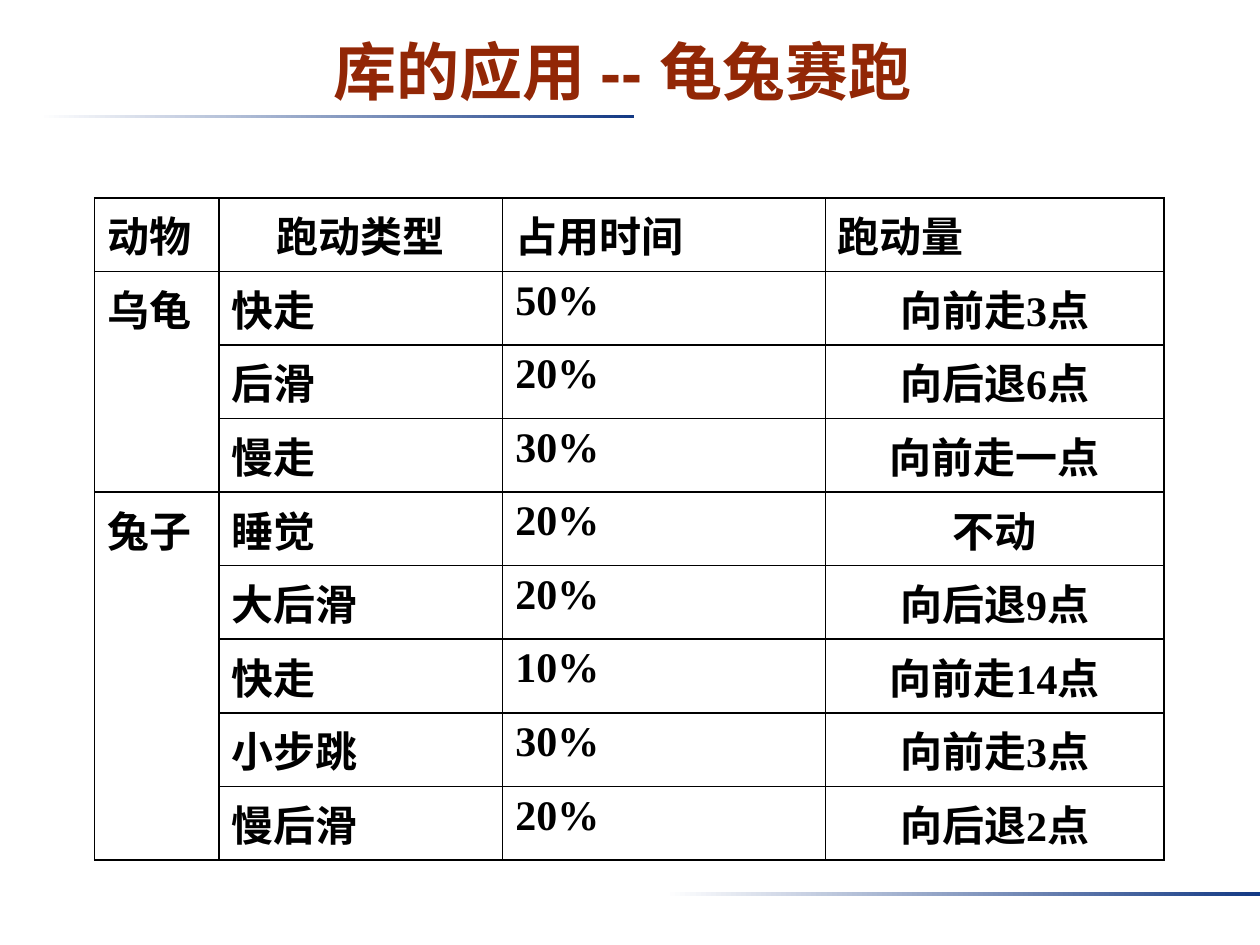
from lxml.etree import SubElement
from pptx import Presentation
from pptx.dml.color import RGBColor
from pptx.enum.shapes import MSO_SHAPE as SHAPE
from pptx.enum.text import MSO_ANCHOR as ANCHOR, PP_ALIGN as ALIGN
from pptx.oxml import parse_xml
from pptx.oxml.ns import nsdecls, qn
from pptx.util import Inches, Pt

HEADER = ["动物", "跑动类型", "占用时间", "跑动量"]
ANIMALS = {
    "乌龟": [
        ("快走", "50%", "向前走3点"),
        ("后滑", "20%", "向后退6点"),
        ("慢走", "30%", "向前走一点"),
    ],
    "兔子": [
        ("睡觉", "20%", "不动"),
        ("大后滑", "20%", "向后退9点"),
        ("快走", "10%", "向前走14点"),
        ("小步跳", "30%", "向前走3点"),
        ("慢后滑", "20%", "向后退2点"),
    ],
}


def rgb(color):
    return RGBColor.from_string(color)


class Deck:
    TITLE_FONT, BODY_FONT = "Arial", "Times New Roman"
    TITLE_COLOR, TEXT_COLOR = "922706", "000000"
    BAR_COLORS = ("FFFFFF", "133984")
    HANGING = Inches(0.52)

    def __init__(self, prs):
        self.s = prs.slides.add_slide(prs.slide_layouts[5])

    def run(self, p, text, font, size, color):
        r = p.add_run()
        r.text = text
        r.font.name = font
        r.font.size = Pt(size)
        r.font.bold = True
        r.font.color.rgb = rgb(color)

    def title(self, text, x, y, w, h):
        sp = self.s.shapes.title
        sp.left, sp.top, sp.width, sp.height = map(Inches, (x, y, w, h))
        tf = sp.text_frame
        tf.word_wrap = True
        tf.vertical_anchor = ANCHOR.MIDDLE
        tf.margin_top = Inches(0.06)
        tf.margin_bottom = Inches(0.05)
        p = tf.paragraphs[0]
        p.alignment = ALIGN.CENTER
        self.run(p, text, self.TITLE_FONT, 36, self.TITLE_COLOR)

    def bar(self, x, y):
        sp = self.s.shapes.add_shape(
            SHAPE.RECTANGLE, Inches(x), Inches(y), Inches(4.72), Inches(0.03))
        sp.shadow.inherit = False
        sp.line.fill.background()
        sp.fill.gradient()
        sp.fill.gradient_angle = 0
        for stop, color in zip(sp.fill.gradient_stops, self.BAR_COLORS):
            stop.color.rgb = rgb(color)

    def borders(self, cell):
        tc_pr = cell._tc.get_or_add_tcPr()
        for i, side in enumerate("LRTB"):
            ln = parse_xml(f'<a:ln{side} {nsdecls("a")} w="{Pt(1)}"/>')
            fill = SubElement(ln, qn("a:solidFill"))
            SubElement(fill, qn("a:srgbClr"), val=self.TEXT_COLOR)
            tc_pr.insert(i, ln)

    def cell(self, cell, text, centered):
        cell.fill.background()
        self.borders(cell)
        if not text:
            return
        p = cell.text_frame.paragraphs[0]
        p.alignment = ALIGN.CENTER if centered else ALIGN.LEFT
        p_pr = p._p.get_or_add_pPr()
        p_pr.set("marL", str(self.HANGING))
        p_pr.set("indent", str(-self.HANGING))
        self.run(p, text, self.BODY_FONT, 24, self.TEXT_COLOR)

    def table(self, rows, spans, x, y, widths, row_h):
        tbl = self.s.shapes.add_table(
            len(rows), len(widths), Inches(x), Inches(y),
            Inches(sum(widths)), Inches(row_h * len(rows))).table
        tbl.first_row = tbl.horz_banding = False
        for col, w in zip(tbl.columns, widths):
            col.width = Inches(w)
        for i, row in enumerate(rows):
            tbl.rows[i].height = Inches(row_h)
            for j, text in enumerate(row):
                centered = j == (1 if i == 0 else 3)
                self.cell(tbl.cell(i, j), text, centered)
        top = 1
        for n in spans:
            tbl.cell(top, 0).merge(tbl.cell(top + n - 1, 0))
            top += n


def main():
    prs = Presentation()
    prs.slide_width, prs.slide_height = Inches(10), Inches(7.5)
    deck = Deck(prs)
    deck.bar(0.31, 0.91)
    deck.bar(5.28, 7.08)
    deck.title("库的应用 -- 龟兔赛跑 ", 0.75, 0.19, 8.5, 0.72)
    rows = [HEADER]
    for animal, moves in ANIMALS.items():
        for i, move in enumerate(moves):
            rows.append(["" if i else animal, *move])
    spans = [len(moves) for moves in ANIMALS.values()]
    deck.table(rows, spans, 0.75, 1.57, [0.99, 2.25, 2.56, 2.69], 0.58)
    prs.save("out.pptx")


if __name__ == "__main__":
    main()
